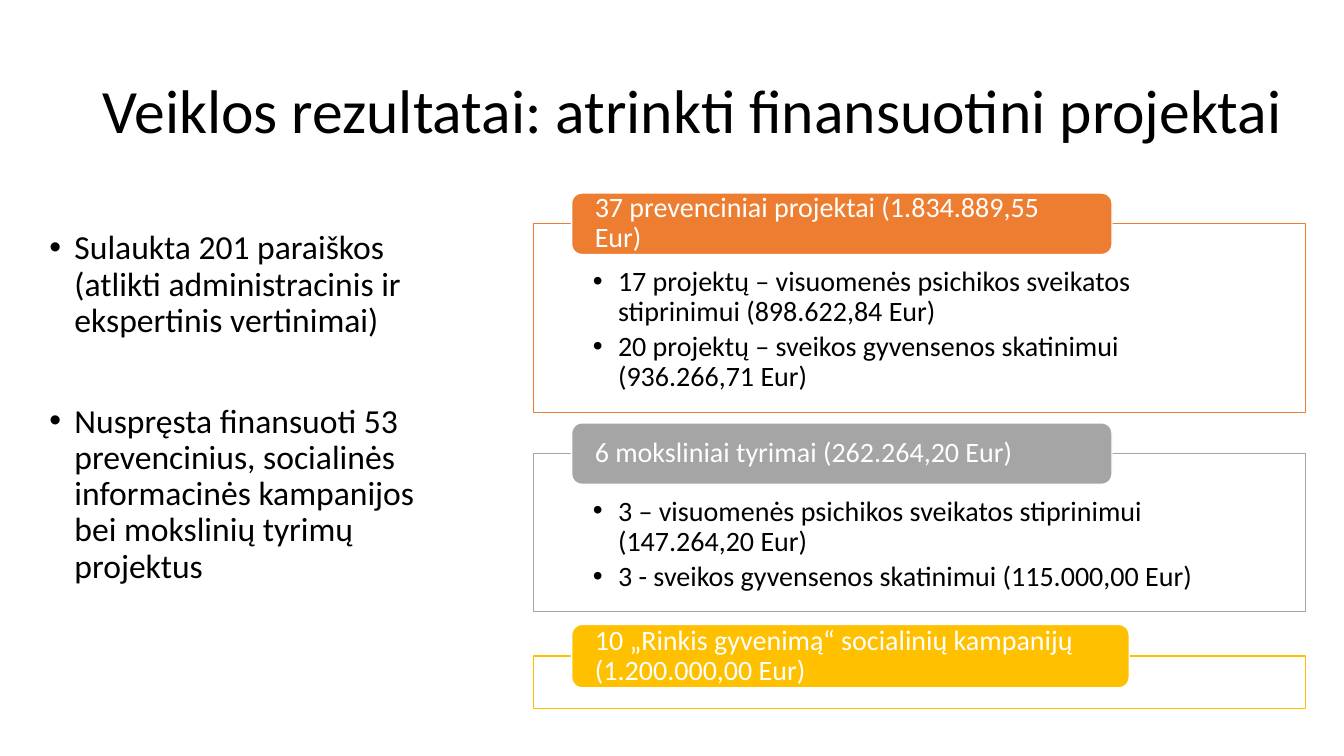
from lxml import etree
from pptx import Presentation
from pptx.dml.color import RGBColor
from pptx.enum.shapes import MSO_SHAPE as Shape
from pptx.enum.text import MSO_ANCHOR as Anchor, PP_ALIGN as Align
from pptx.oxml.ns import qn
from pptx.util import Inches, Pt

# Content
COLORS = {"text": "000000", "white": "FFFFFF", "orange": "ED7D31",
          "gray": "A5A5A5", "yellow": "FFC000"}
FONT = "Calibri"
TITLE = "Veiklos rezultatai: atrinkti finansuotini projektai"
SUMMARY = [
    "Sulaukta 201 paraiškos (atlikti administracinis ir ekspertinis vertinimai)",
    "Nuspręsta finansuoti 53 prevencinius, socialinės informacinės kampanijos "
    "bei mokslinių tyrimų projektus",
]
# Each group: heading, points, colour, frame top, frame height, heading width, heading height
GROUPS = [
    ("37 prevenciniai projektai (1.834.889,55 Eur)",
     ["17 projektų – visuomenės psichikos sveikatos stiprinimui (898.622,84 Eur)",
      "20 projektų – sveikos gyvensenos skatinimui (936.266,71 Eur)"],
     "orange", 2.22, 1.87, 5.36, 0.61),
    ("6 moksliniai tyrimai (262.264,20 Eur)",
     ["3 – visuomenės psichikos sveikatos stiprinimui (147.264,20 Eur)",
      "3 - sveikos gyvensenos skatinimui (115.000,00 Eur)"],
     "gray", 4.5, 1.57, 5.36, 0.61),
    ("10 „Rinkis gyvenimą“ socialinių kampanijų (1.200.000,00 Eur)",
     [], "yellow", 6.51, 0.52, 5.53, 0.63),
]
FRAME_LEFT, FRAME_WIDTH, HEADING_LEFT = 5.29, 7.66, 5.67


def color(name):
    return RGBColor.from_string(COLORS[name])


def add_bullet(paragraph):
    properties = paragraph._p.get_or_add_pPr()
    properties.set("marL", str(Inches(0.25)))
    properties.set("indent", str(-Inches(0.25)))
    etree.SubElement(properties, qn("a:buFont")).set("typeface", "Arial")
    etree.SubElement(properties, qn("a:buChar")).set("char", "•")


def write(shape, texts, size, text_color="text", anchor=Anchor.TOP,
          insets=(0.1, 0.05, 0.1, 0.05), gap=0, bullets=False):
    frame = shape.text_frame
    frame.word_wrap = True
    frame.vertical_anchor = anchor
    (frame.margin_left, frame.margin_top,
     frame.margin_right, frame.margin_bottom) = map(Inches, insets)
    for index, text in enumerate(texts):
        paragraph = frame.add_paragraph() if index else frame.paragraphs[0]
        paragraph.alignment = Align.LEFT
        paragraph.line_spacing = 0.9
        paragraph.space_before = Pt(gap if index else 0)
        if bullets:
            add_bullet(paragraph)
        run = paragraph.add_run()
        run.text = text
        run.font.name = FONT
        run.font.size = Pt(size)
        run.font.color.rgb = color(text_color)


def add_box(slide, kind, box, fill, line):
    shape = slide.shapes.add_shape(kind, *map(Inches, box))
    shape.shadow.inherit = False
    shape.fill.solid()
    shape.fill.fore_color.rgb = color(fill)
    shape.line.color.rgb = color(line)
    shape.line.width = Pt(1)
    return shape


def main():
    presentation = Presentation()
    presentation.slide_width = Inches(13.33)
    presentation.slide_height = Inches(7.5)
    slide = presentation.slides.add_slide(presentation.slide_layouts[6])

    # Title and summary
    title = slide.shapes.add_textbox(*map(Inches, (0.92, 0.4, 12.03, 1.45)))
    write(title, [TITLE], 44, anchor=Anchor.MIDDLE)
    summary = slide.shapes.add_textbox(*map(Inches, (0.39, 2.24, 4.25, 4.52)))
    write(summary, SUMMARY, 24, gap=46, bullets=True)

    # Framed groups, each heading centred on the top edge of its frame
    for heading, points, accent, top, height, tab_width, tab_height in GROUPS:
        frame = add_box(slide, Shape.RECTANGLE,
                        (FRAME_LEFT, top, FRAME_WIDTH, height), "white", accent)
        if points:
            write(frame, points, 20, insets=(0.59, 0.43, 0.59, 0.16),
                  gap=3.5, bullets=True)
        tab = add_box(slide, Shape.ROUNDED_RECTANGLE,
                      (HEADING_LEFT, top - tab_height / 2, tab_width, tab_height),
                      accent, "white")
        write(tab, [heading], 20, "white", Anchor.MIDDLE, (0.2, 0, 0.2, 0))

    presentation.save("out.pptx")


if __name__ == "__main__":
    main()
